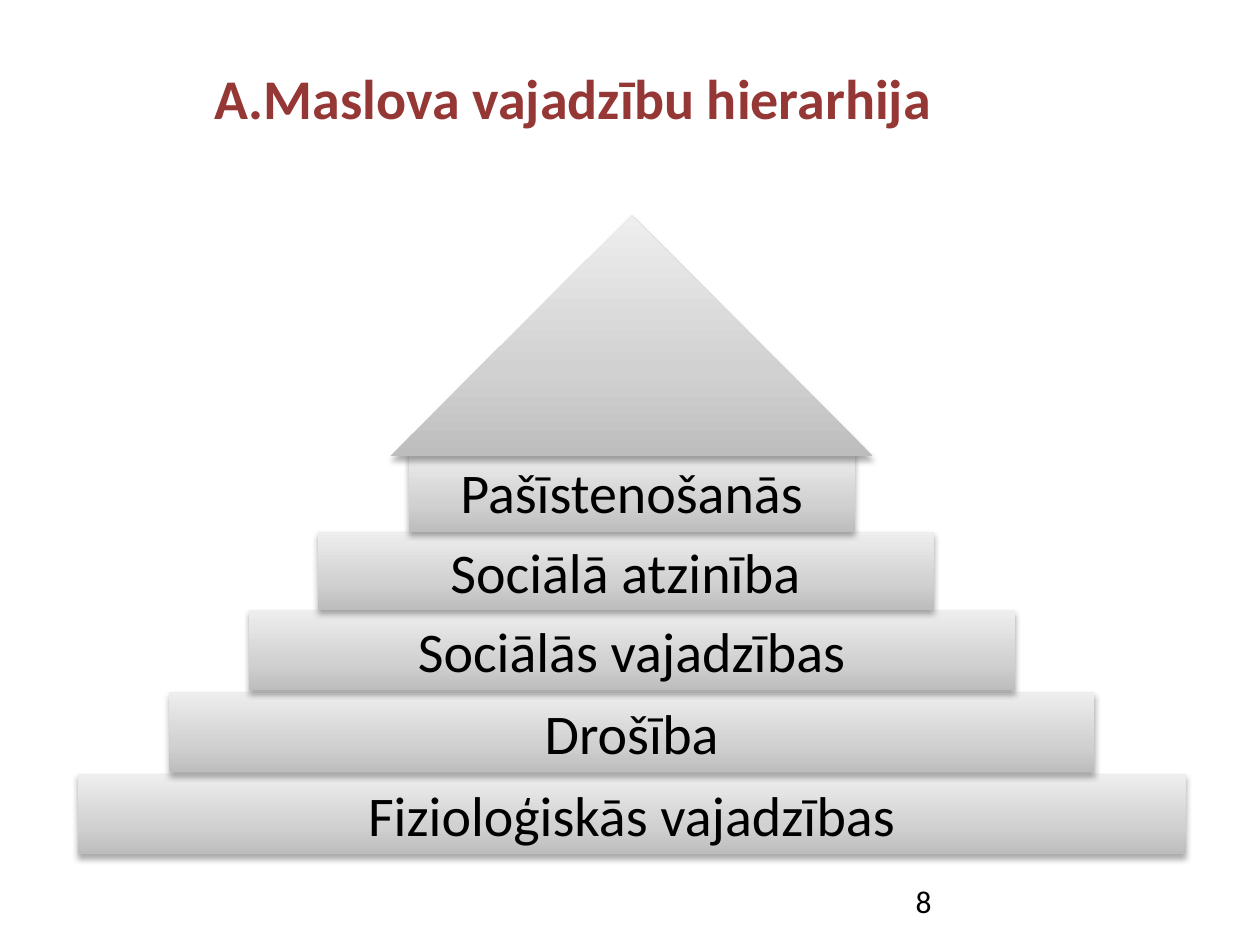
from lxml.etree import SubElement
from pptx import Presentation
from pptx.dml.color import RGBColor
from pptx.enum.shapes import MSO_SHAPE
from pptx.enum.text import MSO_ANCHOR, PP_ALIGN
from pptx.oxml import parse_xml
from pptx.oxml.ns import nsdecls, qn
from pptx.util import Pt

# Content
HEADING = "A.Maslova vajadzību hierarhija"
PAGE_NUMBER = "8"
# need, centre x, top, width, height
LEVELS = [
    ("Fizioloģiskās vajadzības", 361, 442.1, 633, 46.1),
    ("Drošība", 361, 395.3, 528.5, 46.1),
    ("Sociālās vajadzības", 361, 348.5, 437.8, 46.1),
    ("Sociālā atzinība", 357.5, 303.8, 352, 44.6),
    ("Pašīstenošanās", 361, 257.8, 255, 46.1),
]
ROOF = (361, 123.1, 275.8, 137.5)

COLORS = {"heading": "953735", "text": "000000", "shadow": "000000",
          "dark": "BDBDBD", "middle": "D1D1D1", "light": "EEEEEE"}
GRADIENT = [(0, "dark"), (35, "middle"), (100, "light")]
HEADING_FORMAT = {"name": "Calibri", "size": Pt(32), "bold": True}
LEVEL_FORMAT = {"name": "Calibri", "size": Pt(32), "bold": False}
NUMBER_FORMAT = {"name": "Calibri", "size": Pt(18)}


def write(shape, text, font_format, color, align, anchor):
    frame = shape.text_frame
    frame.word_wrap = True
    frame.vertical_anchor = anchor
    paragraph = frame.paragraphs[0]
    paragraph.text = text
    paragraph.alignment = align
    for key, value in font_format.items():
        setattr(paragraph.font, key, value)
    paragraph.font.color.rgb = RGBColor.from_string(COLORS[color])


def add_block(slide, kind, centre, top, width, height):
    block = slide.shapes.add_shape(kind, Pt(centre - width / 2), Pt(top),
                                   Pt(width), Pt(height))
    block.line.fill.background()
    block.shadow.inherit = False
    properties = block.element.spPr

    # Three-stop gradient, dark at the bottom
    stops = "".join(
        f'<a:gs pos="{pos * 1000}"><a:srgbClr val="{COLORS[name]}"/></a:gs>'
        for pos, name in GRADIENT)
    properties.find(qn("a:prstGeom")).addnext(parse_xml(
        f'<a:gradFill {nsdecls("a")} rotWithShape="1"><a:gsLst>{stops}</a:gsLst>'
        '<a:lin ang="16200000" scaled="0"/></a:gradFill>'))

    # Soft shadow below
    shadow = SubElement(
        properties.find(qn("a:effectLst")), qn("a:outerShdw"),
        blurRad=str(Pt(3.5)), dist=str(Pt(2.2)), dir="5400000", rotWithShape="0")
    color = SubElement(shadow, qn("a:srgbClr"), val=COLORS["shadow"])
    SubElement(color, qn("a:alpha"), val="32000")
    return block


def main():
    deck = Presentation()
    deck.slide_width, deck.slide_height = Pt(720), Pt(540)
    slide = deck.slides.add_slide(deck.slide_layouts[5])

    # Title
    title = slide.shapes.title
    title.left, title.top, title.width, title.height = (
        Pt(79.2), Pt(32.4), Pt(496.8), Pt(69.1))
    write(title, HEADING, HEADING_FORMAT, "heading", PP_ALIGN.CENTER, MSO_ANCHOR.TOP)

    # Steps of the pyramid, from the base up
    for need, *place in LEVELS:
        step = add_block(slide, MSO_SHAPE.RECTANGLE, *place)
        write(step, need, LEVEL_FORMAT, "text", PP_ALIGN.CENTER, MSO_ANCHOR.MIDDLE)

    # Roof
    add_block(slide, MSO_SHAPE.ISOSCELES_TRIANGLE, *ROOF)

    # Page number
    number = slide.shapes.add_textbox(Pt(516.2), Pt(500.4), Pt(167.8), Pt(28.8))
    write(number, PAGE_NUMBER, NUMBER_FORMAT, "text", PP_ALIGN.LEFT, MSO_ANCHOR.TOP)

    deck.save("out.pptx")


if __name__ == "__main__":
    main()
